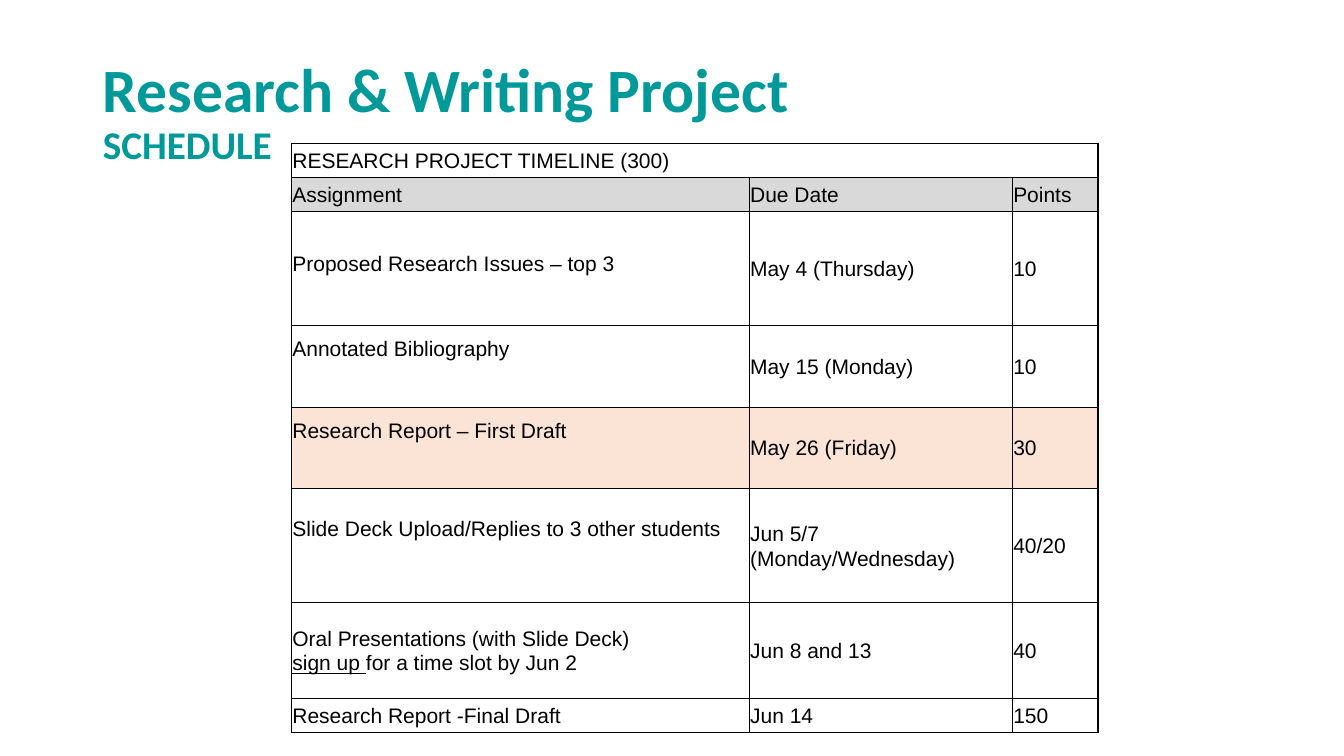
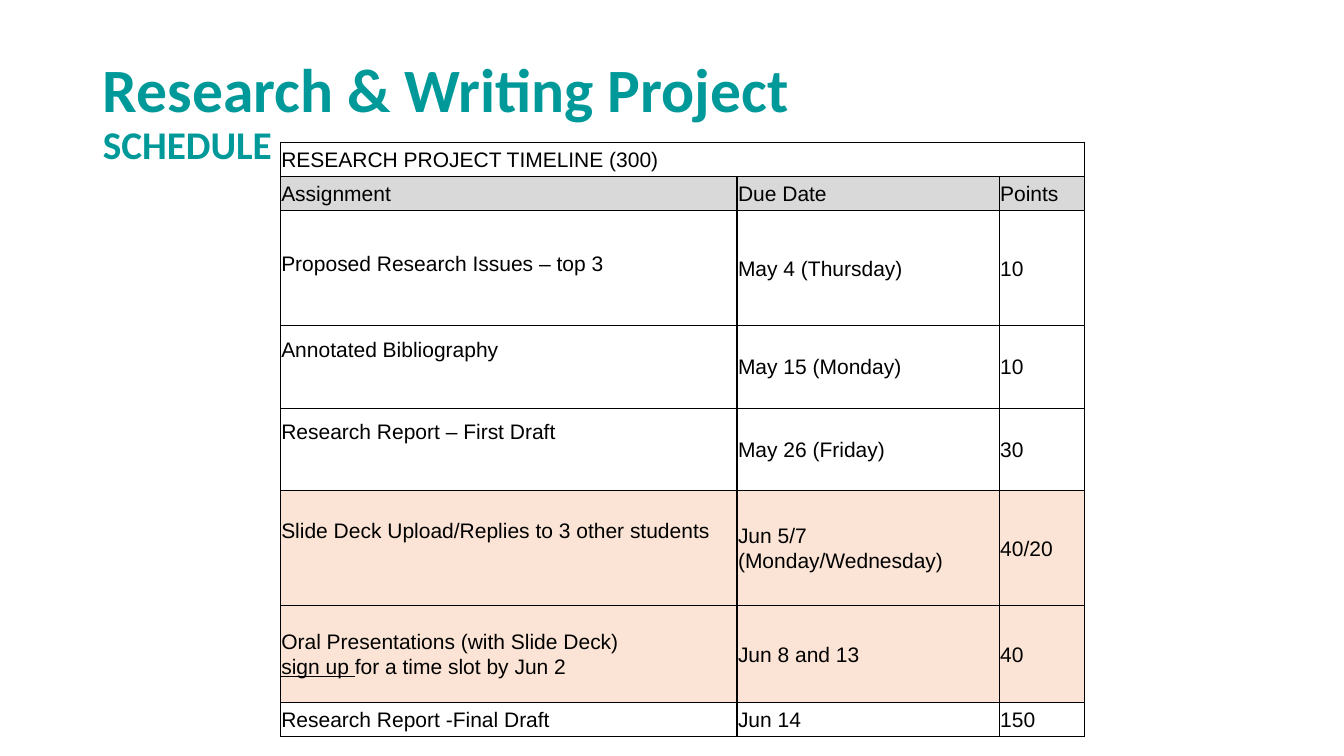
from pptx import Presentation
from pptx.dml.color import RGBColor
from pptx.enum.text import MSO_ANCHOR, MSO_AUTO_SIZE, PP_ALIGN
from pptx.oxml import parse_xml
from pptx.oxml.ns import nsdecls
from pptx.util import Inches, Pt

TEAL, BLACK, GREY, PEACH = "009999", "000000", "D9D9D9", "FBE4D5"
INSET = 0.01
HEADING_ROW, COLUMN_ROW = 0, 1
ROWS = [
    ("RESEARCH PROJECT TIMELINE (300)", "", ""),
    ("Assignment", "Due Date", "Points"),
    ("Proposed Research Issues – top 3", "May 4 (Thursday)", "10"),
    ("Annotated Bibliography", "May 15 (Monday)", "10"),
    ("Research Report – First Draft", "May 26 (Friday)", "30"),
    ("Slide Deck Upload/Replies to 3 other students", "Jun 5/7 (Monday/Wednesday)", "40/20"),
    ("Oral Presentations (with Slide Deck)\n_sign up _for a time slot by Jun 2", "Jun 8 and 13", "40"),
    ("Research Report -Final Draft", "Jun 14", "150"),
]
ASSIGNMENT_LIFTS = {2: 0.1, 3: 0.35, 4: 0.35, 5: 0.35}
SCHEDULES = [
    {"left": 2.89, "top": 1.42, "columns": (4.54, 2.61, 0.85),
     "heights": (0.34, 0.34, 1.13, 0.81, 0.81, 1.13, 0.95, 0.34), "current": (4,)},
    {"left": 2.78, "top": 1.41, "columns": (4.53, 2.6, 0.85),
     "heights": (0.34, 0.34, 1.14, 0.82, 0.82, 1.14, 0.96, 0.34), "current": (5, 6)},
]


def color(value):
    """Turn a hex string into a colour."""
    return RGBColor.from_string(value)


def style_span(span, face, size, ink, bold=False):
    """Set the font of one run."""
    span.font.name = face
    span.font.size = Pt(size)
    span.font.bold = bold
    span.font.color.rgb = color(ink)


def place_layout_title(layout):
    """Set the title position that all pages inherit."""
    title = layout.placeholders[0]
    title.left, title.top = Inches(0.92), Inches(0.4)
    title.width, title.height = Inches(11.5), Inches(1.45)


def add_title(page, heading, subheading):
    """Fill the title placeholder with a heading and a smaller second line."""
    frame = page.shapes.title.text_frame
    frame.text = f"{heading}\v{subheading}"
    frame.auto_size = MSO_AUTO_SIZE.NONE
    frame.vertical_anchor = MSO_ANCHOR.MIDDLE
    para = frame.paragraphs[0]
    para.alignment = PP_ALIGN.LEFT
    para.line_spacing = 0.9
    for span, size in zip(para.runs, (44, 28)):
        style_span(span, "Calibri", size, TEAL, bold=True)


def add_borders(cell):
    """Draw a thin black line on the four sides of a cell."""
    properties = cell._tc.get_or_add_tcPr()
    for side in ("lnL", "lnR", "lnT", "lnB"):
        properties.append(parse_xml(
            f'<a:{side} {nsdecls("a")} w="{Pt(1)}"><a:solidFill>'
            f'<a:srgbClr val="{BLACK}"/></a:solidFill></a:{side}>'))


def fill_cell(cell, fill):
    """Give a cell a solid fill, or none."""
    if fill:
        cell.fill.solid()
        cell.fill.fore_color.rgb = color(fill)
    else:
        cell.fill.background()


def write_cell(cell, text, lift=0):
    """Write lines into a cell, underlining the words between underscores."""
    cell.margin_left = cell.margin_right = cell.margin_top = Inches(INSET)
    cell.margin_bottom = Inches(INSET + lift)
    cell.vertical_anchor = MSO_ANCHOR.MIDDLE
    frame = cell.text_frame
    for number, line in enumerate(text.split("\n")):
        para = frame.add_paragraph() if number else frame.paragraphs[0]
        para.line_spacing = 1.06
        for position, words in enumerate(line.split("_")):
            if words:
                span = para.add_run()
                span.text = words
                style_span(span, "Arial", 15, BLACK)
                span.font.underline = position % 2 == 1


def add_schedule(page, left, top, columns, heights, current):
    """Add the timeline table with the current rows highlighted."""
    table = page.shapes.add_table(
        len(ROWS), len(columns), Inches(left), Inches(top),
        Inches(sum(columns)), Inches(sum(heights))).table
    table.first_row = table.horz_banding = False
    for column, width in zip(table.columns, columns):
        column.width = Inches(width)
    fills = {COLUMN_ROW: GREY, **dict.fromkeys(current, PEACH)}
    for row, (texts, height) in enumerate(zip(ROWS, heights)):
        table.rows[row].height = Inches(height)
        for column, text in enumerate(texts):
            cell = table.cell(row, column)
            lift = ASSIGNMENT_LIFTS.get(row, 0) if column == 0 else 0
            write_cell(cell, text, lift)
            add_borders(cell)
            fill_cell(cell, fills.get(row))
    table.cell(HEADING_ROW, 0).merge(table.cell(HEADING_ROW, len(columns) - 1))


def main():
    """Build and save the deck."""
    deck = Presentation()
    deck.slide_width, deck.slide_height = Inches(13.33), Inches(7.5)
    layout = deck.slide_layouts.get_by_name("Title Only")
    place_layout_title(layout)
    for schedule in SCHEDULES:
        page = deck.slides.add_slide(layout)
        add_title(page, "Research & Writing Project", "SCHEDULE")
        add_schedule(page, **schedule)
    deck.save("out.pptx")


if __name__ == "__main__":
    main()
